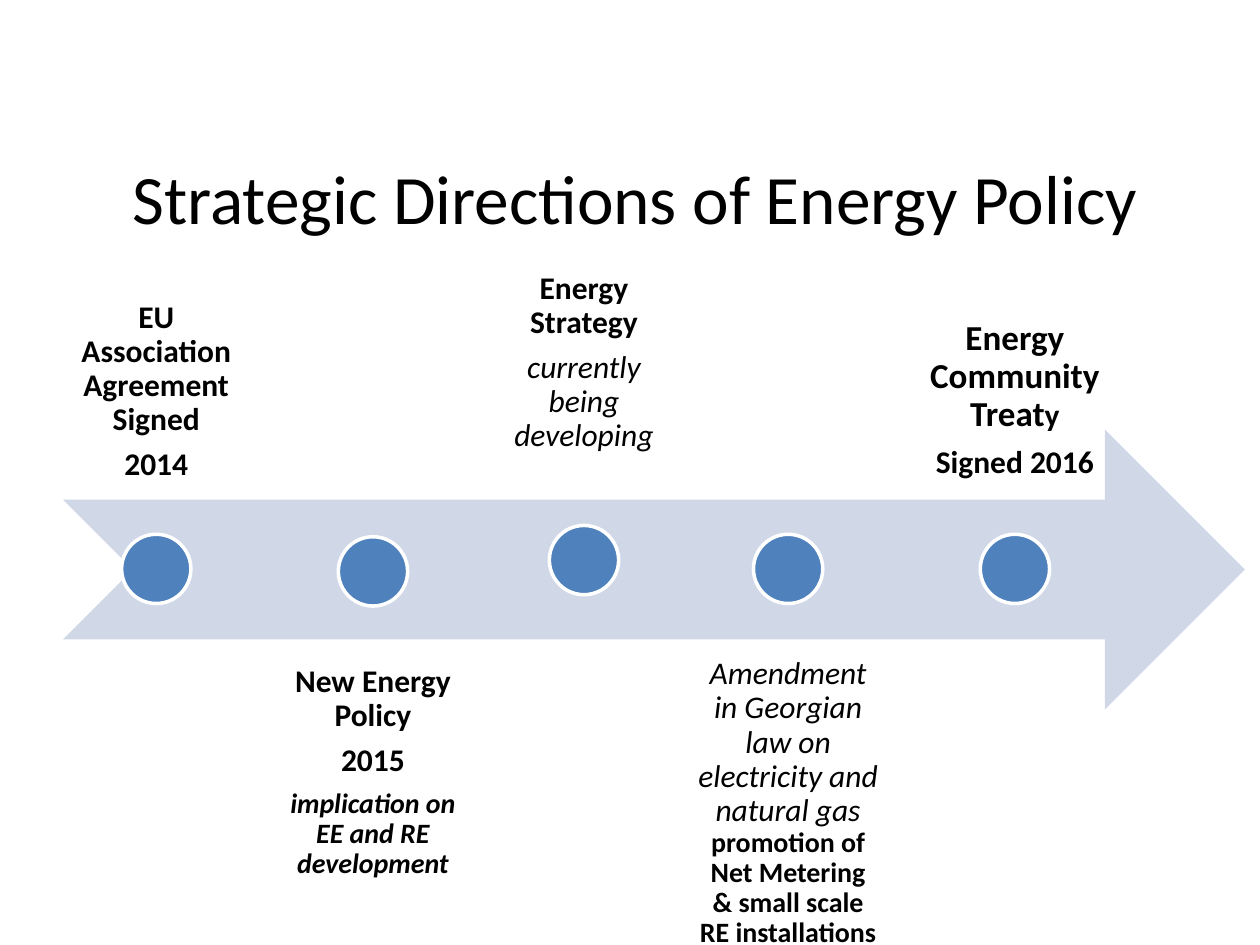
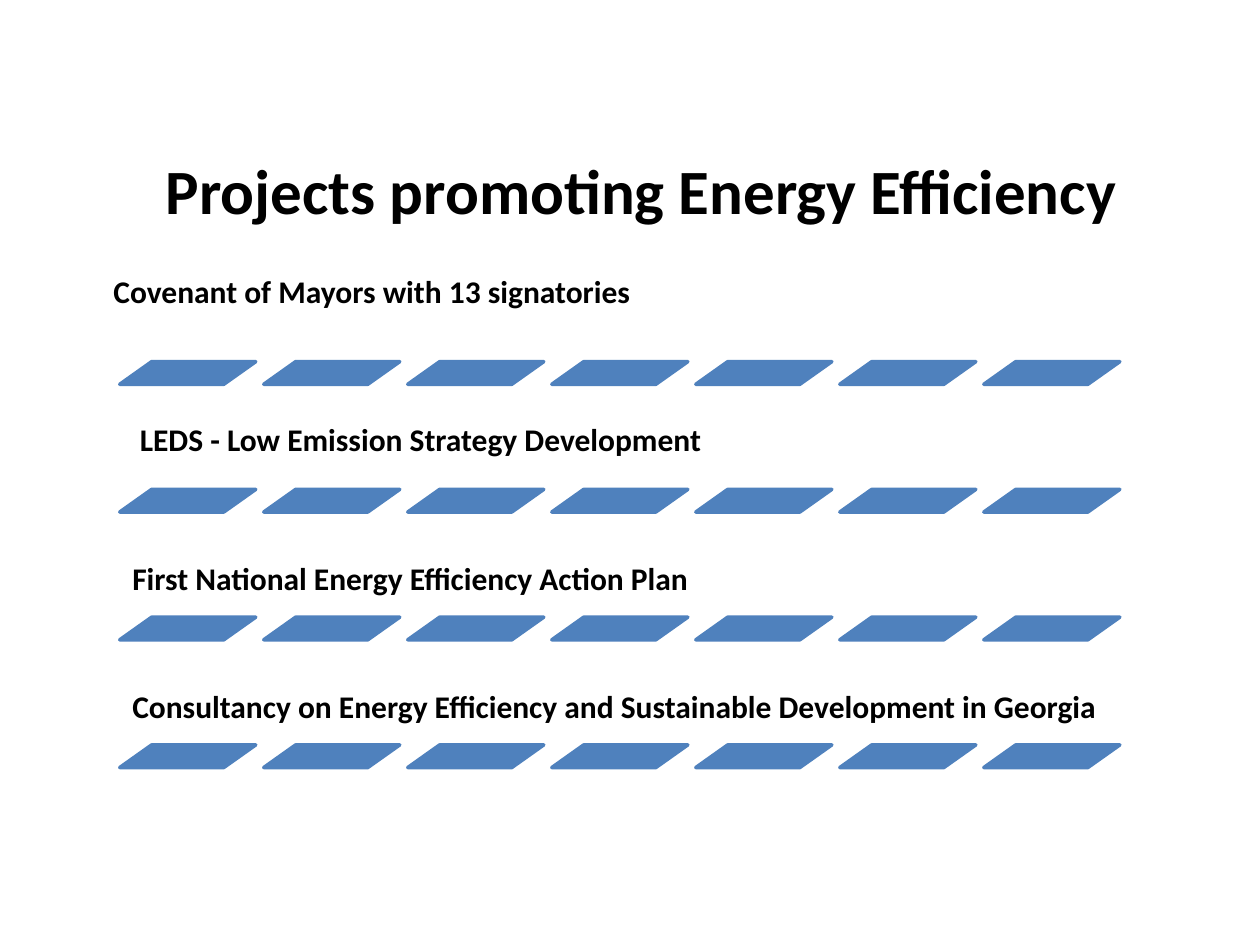
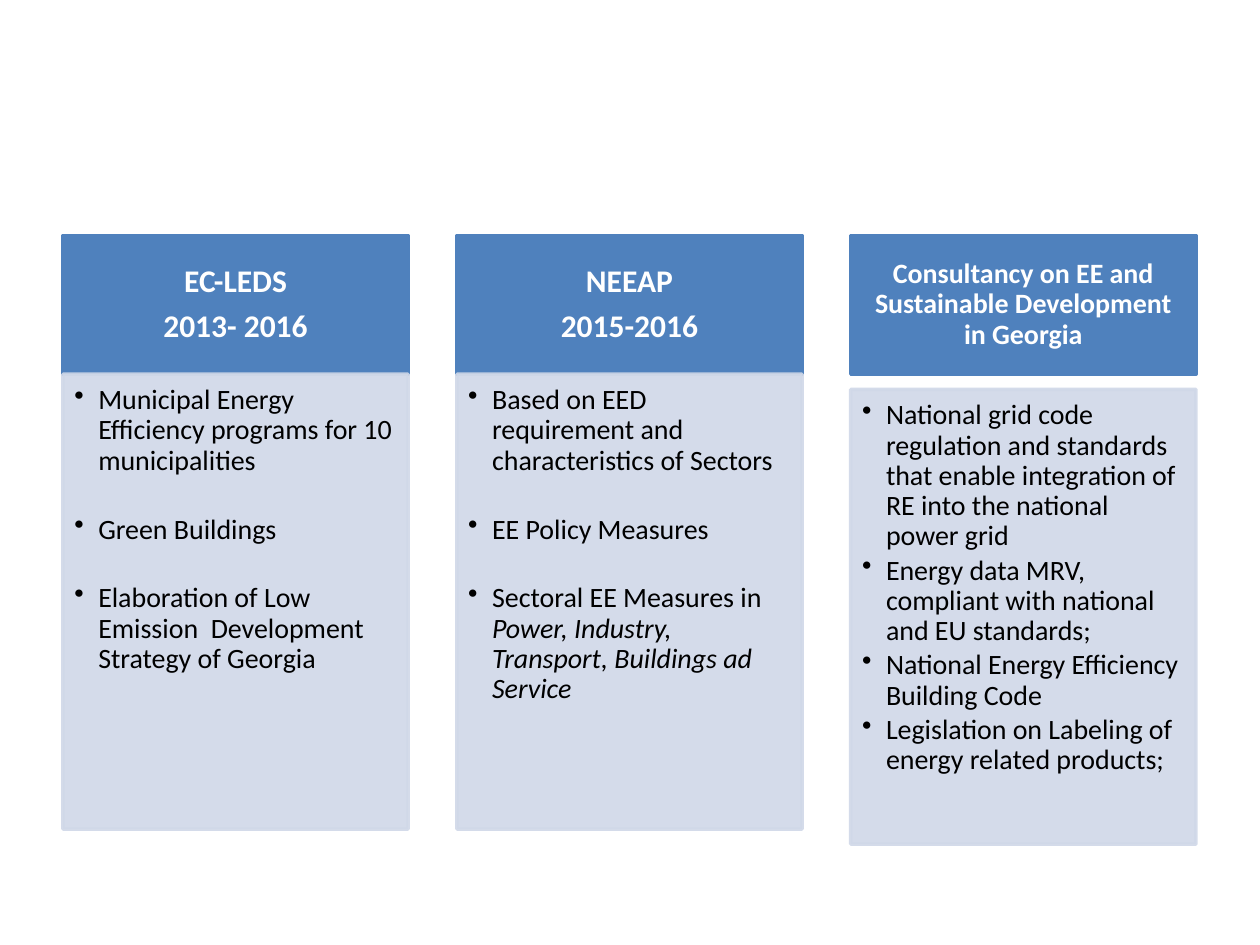
from dataclasses import dataclass

from lxml.etree import SubElement
from pptx import Presentation
from pptx.dml.color import RGBColor
from pptx.enum.shapes import MSO_SHAPE
from pptx.enum.text import MSO_ANCHOR, PP_ALIGN
from pptx.oxml.ns import qn
from pptx.shapes.autoshape import Shape
from pptx.slide import Slide
from pptx.util import Emu, Inches, Pt

COLORS = {"ink": "000000", "paper": "FFFFFF", "blue": "4F81BD", "pale": "D0D8E8"}
FONT = "Calibri"
COLUMNS, ROWS = 100, 75
SLIDE_WIDTH, SLIDE_HEIGHT = Inches(10), Inches(7.5)


@dataclass(frozen=True)
class Area:
    """A place on the slide grid, in columns and rows."""
    left: float
    top: float
    width: float
    height: float

    def emu(self) -> tuple[Emu, Emu, Emu, Emu]:
        column, row = SLIDE_WIDTH / COLUMNS, SLIDE_HEIGHT / ROWS
        return (Emu(round(self.left * column)), Emu(round(self.top * row)),
                Emu(round(self.width * column)), Emu(round(self.height * row)))


@dataclass(frozen=True)
class Span:
    text: str
    size: float = 18
    bold: bool = False
    italic: bool = False
    color: str = "ink"


@dataclass(frozen=True)
class TextStyle:
    """Insets run left, top, right, bottom in inches; gap is a share of the text size."""
    insets: tuple[float, float, float, float]
    anchor: MSO_ANCHOR = MSO_ANCHOR.TOP
    align: PP_ALIGN = PP_ALIGN.LEFT
    line_spacing: float = 0.9
    gap: float = 0.35
    bullet: bool = False


Paragraphs = list[list[Span]]


@dataclass(frozen=True)
class Milestone:
    area: Area
    anchor: MSO_ANCHOR
    dot_top: float
    paragraphs: Paragraphs
    inset: float = 0.14


@dataclass(frozen=True)
class Project:
    label: str
    area: Area


@dataclass(frozen=True)
class Card:
    header: list[str]
    header_size: float
    header_insets: tuple[float, float, float, float]
    body_top: float
    bullet_gap: float
    bullets: Paragraphs


TITLE_STYLE = TextStyle((0.1, 0.05, 0.1, 0.05), MSO_ANCHOR.MIDDLE, PP_ALIGN.CENTER, 1, 0)

DOT_SIZE = 5.5
TIMELINE_ARROW = Area(5, 34.1, 93.8, 22.2)
MILESTONES = [
    Milestone(Area(5, 17.5, 14.8, 22.2), MSO_ANCHOR.BOTTOM, 42.4, [
        [Span("EU Association Agreement Signed", bold=True)],
        [Span("2014", bold=True)]]),
    Milestone(Area(20.4, 51.4, 18.4, 21.4), MSO_ANCHOR.TOP, 42.6, [
        [Span("New Energy Policy", bold=True)],
        [Span("2015", bold=True)],
        [Span("implication on EE and RE development", 16, True, True)]]),
    Milestone(Area(39.3, 18.3, 14.1, 19.1), MSO_ANCHOR.BOTTOM, 41.7, [
        [Span("Energy Strategy", bold=True)],
        [Span("currently being developing", italic=True)]]),
    Milestone(Area(54, 50.8, 17.1, 22.2), MSO_ANCHOR.TOP, 42.4, [
        [Span("Amendment in Georgian law on electricity and natural gas ", italic=True),
         Span("promotion of Net Metering & small scale RE installations", 16, True)]]),
    Milestone(Area(71.7, 17.5, 17.7, 22.2), MSO_ANCHOR.BOTTOM, 42.4, [
        [Span("Energy Community Treat", 20, True), Span("y", bold=True)],
        [Span("Signed 2016", bold=True)]], 0.16),
]

PROJECT_STYLE = TextStyle((0.07,) * 4, MSO_ANCHOR.BOTTOM)
PROJECTS = [
    Project("Covenant of Mayors with 13 signatories", Area(8.3, 20.2, 81, 5.1)),
    Project("LEDS - Low Emission Strategy Development", Area(10.4, 29.7, 81, 7.4)),
    Project("First National Energy Efficiency Action Plan", Area(9.8, 40.7, 81, 7.4)),
    Project("Consultancy on Energy Efficiency and Sustainable Development in Georgia",
            Area(9.8, 50.9, 81, 7.4)),
]
TILE = Area(9.5, 28.7, 10.8, 1.8)
TILES_PER_STRIP = 7
TILE_PITCH, STRIP_PITCH = 11.43, 10.14
TILE_SLANT = 1.41

CARD_HEADER = Area(5, 18.7, 27.4, 11)
CARD_PITCH = 31.26
BODY_HEIGHT = 36.1
CARDS = [
    Card(["EC-LEDS", "2013- 2016"], 18, (0.14, 0.08, 0.14, 0.08), 29.7, 1.38, [
        [Span("Municipal Energy Efficiency programs for 10 municipalities", 16)],
        [Span("Green Buildings", 16)],
        [Span("Elaboration of Low Emission  Development Strategy of Georgia", 16)]]),
    Card(["NEEAP", "2015-2016"], 18, (0.14, 0.08, 0.14, 0.08), 29.7, 1.38, [
        [Span("Based on EED requirement and characteristics of Sectors", 16)],
        [Span("EE Policy Measures", 16)],
        [Span("Sectoral EE Measures in ", 16),
         Span("Power, Industry, Transport, Buildings ad Service", 16, italic=True)]]),
    Card(["Consultancy on EE and Sustainable Development in Georgia"], 16,
         (0.12, 0.07, 0.12, 0.07), 30.9, 0.15, [
        [Span("National grid code regulation and standards that enable integration "
              "of RE into the national power grid", 16)],
        [Span("Energy data MRV, compliant with national and EU standards;", 16)],
        [Span("National Energy Efficiency Building Code", 16)],
        [Span("Legislation on Labeling of energy related products;", 16)]]),
]


def rgb(name: str) -> RGBColor:
    return RGBColor.from_string(COLORS[name])


def add_bullet(para) -> None:
    properties = para._p.get_or_add_pPr()
    indent = Inches(0.19)
    properties.set("marL", str(indent))
    properties.set("indent", str(-indent))
    SubElement(properties, qn("a:buChar")).set("char", "•")


def write_text(shape: Shape, paragraphs: Paragraphs, style: TextStyle) -> None:
    frame = shape.text_frame
    frame.word_wrap = True
    frame.vertical_anchor = style.anchor
    (frame.margin_left, frame.margin_top,
     frame.margin_right, frame.margin_bottom) = map(Inches, style.insets)
    for index, spans in enumerate(paragraphs):
        para = frame.add_paragraph() if index else frame.paragraphs[0]
        para.alignment = style.align
        para.line_spacing = style.line_spacing
        para.space_after = Pt(round(style.gap * spans[0].size, 1))
        if style.bullet:
            add_bullet(para)
        for span in spans:
            run = para.add_run()
            run.text = span.text
            run.font.name = FONT
            run.font.size = Pt(span.size)
            run.font.bold = span.bold
            run.font.italic = span.italic
            run.font.color.rgb = rgb(span.color)


def add_text(page: Slide, area: Area, paragraphs: Paragraphs, style: TextStyle) -> None:
    write_text(page.shapes.add_textbox(*area.emu()), paragraphs, style)


def add_figure(page: Slide, kind: MSO_SHAPE, area: Area, fill: str,
               line: str | None = None, opacity: int = 100) -> Shape:
    shape = page.shapes.add_shape(kind, *area.emu())
    shape.shadow.inherit = False
    shape.fill.solid()
    shape.fill.fore_color.rgb = rgb(fill)
    if line:
        shape.line.color.rgb = rgb(line)
        shape.line.width = Pt(2)
    else:
        shape.line.fill.background()
    if opacity < 100:
        for color in shape._element.spPr.iter(qn("a:srgbClr")):
            SubElement(color, qn("a:alpha")).set("val", str(opacity * 1000))
    return shape


def build_timeline(page: Slide) -> None:
    add_text(page, Area(5.1, 10.7, 90.6, 9.9),
             [[Span("Strategic Directions of Energy Policy", 39.6)]], TITLE_STYLE)
    add_figure(page, MSO_SHAPE.NOTCHED_RIGHT_ARROW, TIMELINE_ARROW, "pale")
    for milestone in MILESTONES:
        area = milestone.area
        style = TextStyle((milestone.inset,) * 4, milestone.anchor, PP_ALIGN.CENTER)
        add_text(page, area, milestone.paragraphs, style)
        dot_left = area.left + (area.width - DOT_SIZE) / 2
        add_figure(page, MSO_SHAPE.OVAL,
                   Area(dot_left, milestone.dot_top, DOT_SIZE, DOT_SIZE), "blue", "paper")


def build_projects(page: Slide) -> None:
    add_text(page, Area(5.9, 11.5, 90, 7.1),
             [[Span("Projects promoting Energy Efficiency", 36, True)]], TITLE_STYLE)
    for row, project in enumerate(PROJECTS):
        add_text(page, project.area, [[Span(project.label, bold=True)]], PROJECT_STYLE)
        for column in range(TILES_PER_STRIP):
            tile_area = Area(TILE.left + column * TILE_PITCH, TILE.top + row * STRIP_PITCH,
                             TILE.width, TILE.height)
            tile = add_figure(page, MSO_SHAPE.PARALLELOGRAM, tile_area, "blue", "blue")
            tile.adjustments[0] = TILE_SLANT


def build_cards(page: Slide) -> None:
    for index, card in enumerate(CARDS):
        left = CARD_HEADER.left + index * CARD_PITCH
        header = add_figure(page, MSO_SHAPE.RECTANGLE,
                            Area(left, CARD_HEADER.top, CARD_HEADER.width, CARD_HEADER.height),
                            "blue", "blue")
        write_text(header,
                   [[Span(line, card.header_size, True, color="paper")] for line in card.header],
                   TextStyle(card.header_insets, MSO_ANCHOR.MIDDLE, PP_ALIGN.CENTER))
        body = add_figure(page, MSO_SHAPE.RECTANGLE,
                          Area(left, card.body_top, CARD_HEADER.width, BODY_HEIGHT),
                          "pale", "pale", opacity=90)
        write_text(body, card.bullets,
                   TextStyle((0.09, 0.09, 0.12, 0.14), gap=card.bullet_gap, bullet=True))


def main() -> None:
    deck = Presentation()
    deck.slide_width, deck.slide_height = SLIDE_WIDTH, SLIDE_HEIGHT
    blank = deck.slide_layouts[6]
    for build in (build_timeline, build_projects, build_cards):
        build(deck.slides.add_slide(blank))
    deck.save("out.pptx")


if __name__ == "__main__":
    main()
